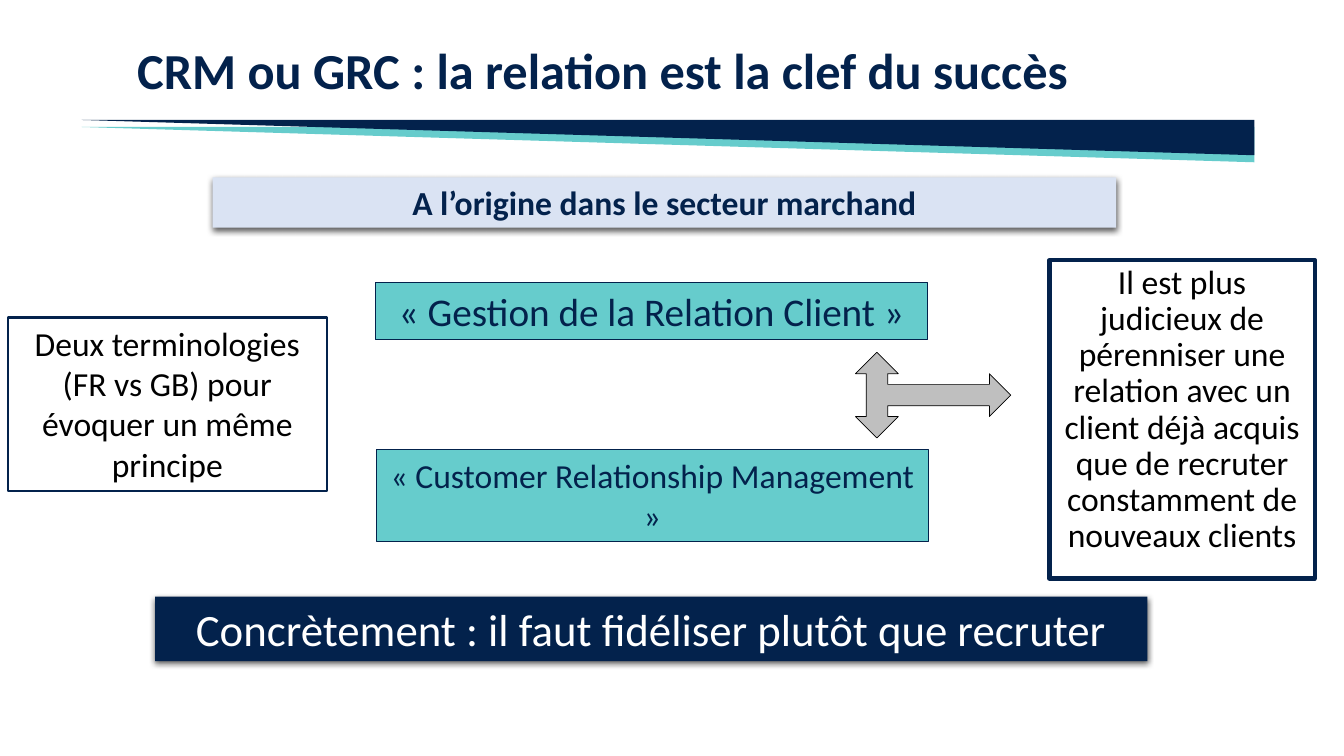
"""Build the slide on customer relations and loyalty."""
from dataclasses import dataclass
from typing import Optional

from lxml import etree
from pptx import Presentation
from pptx.dml.color import RGBColor
from pptx.enum.shapes import MSO_SHAPE
from pptx.enum.text import MSO_ANCHOR, MSO_AUTO_SIZE, PP_ALIGN
from pptx.oxml.ns import qn
from pptx.util import Inches, Pt

RECT = MSO_SHAPE.RECTANGLE
WEDGE = MSO_SHAPE.RIGHT_TRIANGLE
ARROW = MSO_SHAPE.LEFT_RIGHT_UP_ARROW
TOP, MIDDLE = MSO_ANCHOR.TOP, MSO_ANCHOR.MIDDLE
LEFT, CENTER = PP_ALIGN.LEFT, PP_ALIGN.CENTER
FIXED, GROW = MSO_AUTO_SIZE.NONE, MSO_AUTO_SIZE.SHAPE_TO_FIT_TEXT

NAVY = RGBColor(0x03, 0x22, 0x4C)
TEAL = RGBColor(0x66, 0xCC, 0xCC)
PALE = RGBColor(0xDA, 0xE3, 0xF3)
GRAY = RGBColor(0xBF, 0xBF, 0xBF)
WHITE = RGBColor(0xFF, 0xFF, 0xFF)
BLACK = RGBColor(0, 0, 0)
FONT = "Calibri"


@dataclass
class Form:
    """A preset shape with its place, fill and line."""
    at: tuple
    fill: RGBColor
    kind: int = RECT
    turn: int = 0
    line: Optional[RGBColor] = None
    width: float = 0
    shadow: bool = False


@dataclass
class Label:
    """A text with its format."""
    text: str
    size: int
    color: RGBColor
    bold: bool = False
    align: int = CENTER
    anchor: int = TOP
    fit: int = GROW
    space: Optional[float] = None
    before: int = 0


FORMS = [
    Form((0.81, 1.26, 11.63, 0.35), TEAL, WEDGE, 180),
    Form((0.81, 1.19, 11.63, 0.35), NAVY, WEDGE, 180),
    Form((8.83, 3.15, 0.85, 1.54), GRAY, ARROW, 90, BLACK, 0.5),
]
BOXES = [
    (Form((10.41, 2.58, 2.63, 3.16), WHITE, line=NAVY, width=3),
     Label("Il est plus judicieux de pérenniser une relation avec un client "
           "déjà acquis que de recruter constamment de nouveaux clients",
           24, BLACK, fit=FIXED, space=0.9, before=10)),
    (Form((2.11, 1.76, 8.96, 0.5), PALE, shadow=True),
     Label("A l’origine dans le secteur marchand", 24, NAVY, True)),
    (Form((3.72, 2.8, 5.48, 0.57), TEAL, line=NAVY, width=0.5),
     Label("« Gestion de la Relation Client »", 28, NAVY)),
    (Form((0.08, 3.15, 3.16, 1.72), WHITE, line=NAVY, width=1.5),
     Label("Deux terminologies (FR vs GB) pour évoquer un même principe",
           24, BLACK)),
    (Form((1.54, 5.92, 9.84, 0.64), NAVY, shadow=True),
     Label("Concrètement : il faut fidéliser plutôt que recruter",
           32, WHITE)),
    (Form((3.73, 4.46, 5.48, 0.91), TEAL, line=NAVY, width=0.5),
     Label("« Customer Relationship Management »", 24, NAVY)),
]
TITLE = Label("CRM ou GRC : la relation est la clef du succès", 36, NAVY,
              True, LEFT, MIDDLE, FIXED, 0.9)


def style(target: object, values: dict) -> None:
    """Set each named attribute on the target."""
    for name, value in values.items():
        setattr(target, name, value)


def place(shape: object, at: tuple) -> None:
    """Move and size a shape, in inches."""
    style(shape, dict(zip(("left", "top", "width", "height"),
                          map(Inches, at))))


def shade(shape: object) -> None:
    """Give a shape a soft shadow below."""
    effects = shape._element.spPr.find(qn("a:effectLst"))
    outer = etree.SubElement(effects, qn("a:outerShdw"), blurRad=str(Pt(4.5)),
                             dist=str(Pt(1.5)), dir="5400000", algn="ctr",
                             rotWithShape="0")
    color = etree.SubElement(outer, qn("a:srgbClr"), val=str(BLACK))
    etree.SubElement(color, qn("a:alpha"), val="63000")


def draw(slide: object, form: Form) -> object:
    """Add one shape to the slide."""
    shape = slide.shapes.add_shape(form.kind, *map(Inches, form.at))
    shape.rotation = form.turn
    shape.shadow.inherit = False
    shape.fill.solid()
    shape.fill.fore_color.rgb = form.fill
    if form.line is None:
        shape.line.fill.background()
    else:
        shape.line.color.rgb = form.line
        shape.line.width = Pt(form.width)
    if form.shadow:
        shade(shape)
    return shape


def write(shape: object, label: Label) -> None:
    """Put a formatted text in a shape."""
    frame = shape.text_frame
    frame.text = label.text
    style(frame, {"word_wrap": True, "auto_size": label.fit,
                  "vertical_anchor": label.anchor})
    para = frame.paragraphs[0]
    style(para, {"alignment": label.align, "line_spacing": label.space,
                 "space_before": Pt(label.before)})
    font = para.runs[0].font
    style(font, {"name": FONT, "size": Pt(label.size), "bold": label.bold})
    font.color.rgb = label.color


def main() -> None:
    """Build and save the slide."""
    deck = Presentation()
    style(deck, {"slide_width": Inches(13.33), "slide_height": Inches(7.5)})
    slide = deck.slides.add_slide(deck.slide_layouts[5])
    place(slide.shapes.title, (1.26, 0, 12.07, 1.45))
    write(slide.shapes.title, TITLE)
    for form in FORMS:
        draw(slide, form)
    for form, label in BOXES:
        write(draw(slide, form), label)
    deck.save("out.pptx")


if __name__ == "__main__":
    main()
